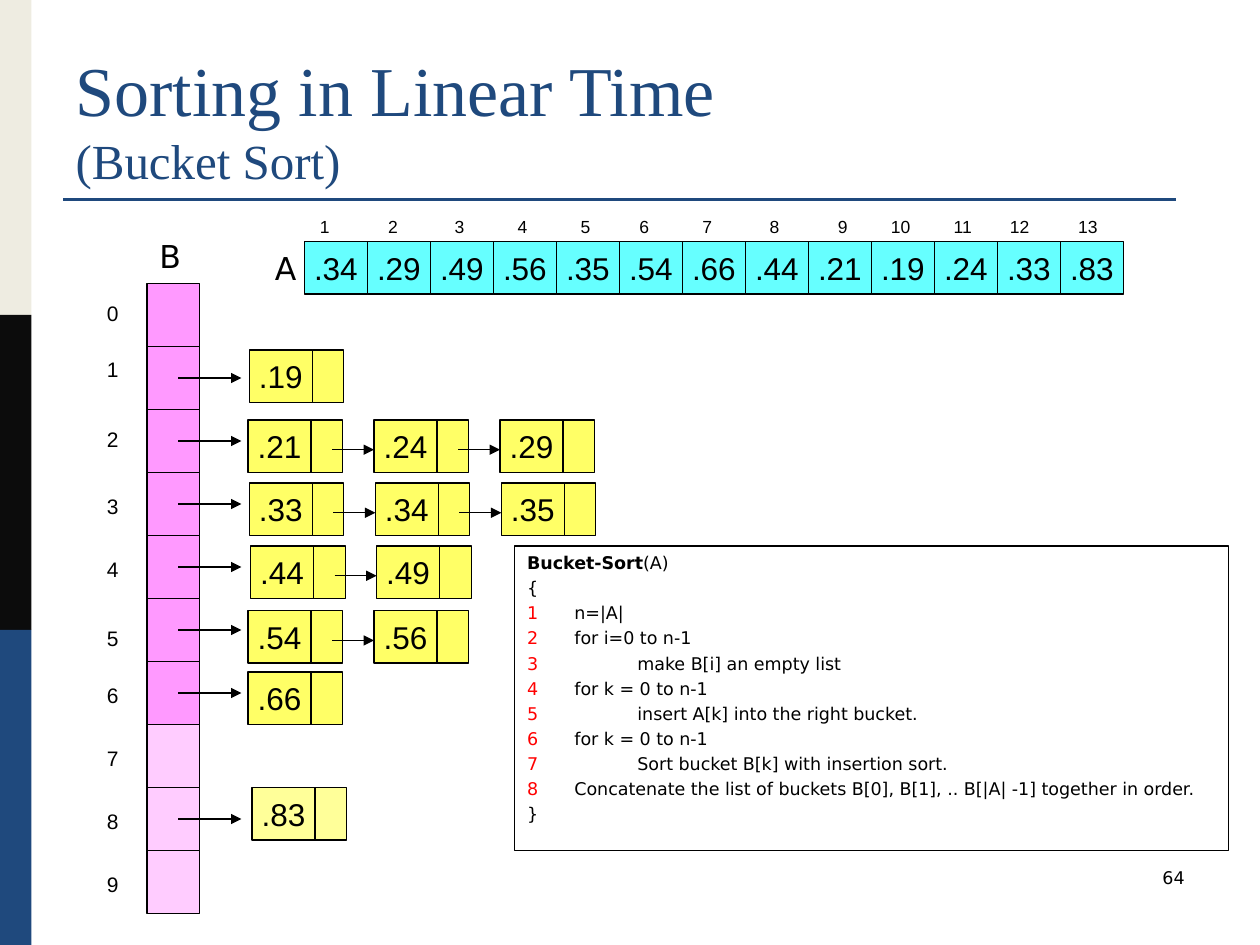
from lxml.etree import SubElement
from pptx import Presentation
from pptx.dml.color import RGBColor
from pptx.enum.shapes import MSO_CONNECTOR, MSO_SHAPE
from pptx.enum.text import MSO_ANCHOR, MSO_AUTO_SIZE, PP_ALIGN
from pptx.oxml.ns import qn
from pptx.util import Pt

COLORS = {
    "navy": "1F497D", "cream": "EEECE1", "ink": "0C0C0C", "black": "000000",
    "red": "FF0000", "array": "66FFFF", "bucket": "FF99FF",
    "pale bucket": "FFCCFF", "node": "FFFF66", "pale node": "FFFF99",
}
CELL, SHORT, LINK = 36, 30, 18  # long and short side of a cell, width of a link field

deck = Presentation()
deck.slide_width, deck.slide_height = Pt(720), Pt(540)
slide = deck.slides.add_slide(deck.slide_layouts[1])
shapes = slide.shapes


def write(paragraph, text, size=18, font="Arial", color="black", bold=False, align=None):
    run = paragraph.add_run()
    run.text = text
    run.font.size, run.font.name, run.font.bold = Pt(size), font, bold
    run.font.color.rgb = RGBColor.from_string(COLORS[color])
    if align is not None:
        paragraph.alignment = align


def add_box(left, top, width, height, fill, text="", outlined=True):
    box = shapes.add_shape(MSO_SHAPE.RECTANGLE, Pt(left), Pt(top), Pt(width), Pt(height))
    box.shadow.inherit = False
    box.fill.solid()
    box.fill.fore_color.rgb = RGBColor.from_string(COLORS[fill])
    if outlined:
        box.line.color.rgb = RGBColor.from_string(COLORS["black"])
        box.line.width = Pt(0.75)
    else:
        box.line.fill.background()
    if text:
        box.text_frame.word_wrap = False
        write(box.text_frame.paragraphs[0], text, align=PP_ALIGN.CENTER)


# Side band and title
for i, color in enumerate(["cream", "ink", "navy"]):
    add_box(0, 180 * i, 18, 180, color, outlined=False)

title = shapes.title
title.left, title.top, title.width, title.height = Pt(36), Pt(21.6), Pt(648), Pt(90)
title.text_frame.vertical_anchor = MSO_ANCHOR.BOTTOM
title.text_frame.auto_size = MSO_AUTO_SIZE.NONE
heading = title.text_frame.paragraphs[0]
write(heading, "Sorting in Linear Time", 40, "Times New Roman", "navy", align=PP_ALIGN.LEFT)
heading.add_line_break()
write(heading, "(Bucket Sort)", 28, "Times New Roman", "navy")

# Array A
values = ".34 .29 .49 .56 .35 .54 .66 .44 .21 .19 .24 .33 .83".split()
for i, value in enumerate(values):
    add_box(174 + CELL * i, 138, CELL, SHORT, "array", value)

# Buckets B, each with its arrow to a chain of nodes
chains = {  # bucket: left, top, values
    1: (142.5, 200, [".19"]),
    2: (141.75, 240, [".21", ".24", ".29"]),
    3: (142.5, 276, [".33", ".34", ".35"]),
    4: (143.25, 312, [".44", ".49"]),
    5: (141.75, 349, [".54", ".56"]),
    6: (141.75, 384, [".66"]),
    8: (144, 450, [".83"]),
}
lines = [(36, 114, 672, "navy", 1.5, False)]  # left, y, right, color, width, arrow
for bucket in range(10):
    bucket_top = 162 + CELL * bucket
    add_box(84, bucket_top, SHORT, CELL, "bucket" if bucket < 7 else "pale bucket")
    if bucket not in chains:
        continue
    lines.append((102, bucket_top + 18, 138, "black", 0.75, True))
    chain_left, top, chain = chains[bucket]
    fill = "node" if bucket < 7 else "pale node"
    for i, value in enumerate(chain):
        left = chain_left + 72 * i
        add_box(left, top, CELL, SHORT, fill, value)
        add_box(left + CELL, top, LINK, SHORT, fill)
        if i:
            lines.append((left - 24, top + 17, left, "black", 0.75, True))

for left, y, right, color, width, arrow in lines:
    line = shapes.add_connector(MSO_CONNECTOR.STRAIGHT, Pt(left), Pt(y), Pt(right), Pt(y))
    line.line.color.rgb = RGBColor.from_string(COLORS[color])
    line.line.width = Pt(width)
    if arrow:
        SubElement(line.line._get_or_add_ln(), qn("a:tailEnd"), type="triangle")
    SubElement(line._element.spPr, qn("a:effectLst"))

# Labels: text, left, top, width, height, size, font, alignment
index_text = "".join(f"\t{i + 1}" for i in range(len(values)))
bucket_label_tops = [168, 200, 240, 278.5, 314.5, 354, 386.5, 422.5, 458.5, 494.5]
labels = [
    (index_text, 162, 120, 486, 19.5, 10, "Arial", PP_ALIGN.LEFT),
    ("A", 150, 139, 36, 29, 18, "DejaVu Sans", PP_ALIGN.LEFT),
    ("B", 84, 132, 36, 29, 18, "DejaVu Sans", PP_ALIGN.LEFT),
    ("64", 516, 492, 168, 36, 10, "DejaVu Sans", PP_ALIGN.RIGHT),
]
labels += [(str(i), 54, top, 24, 21.5, 12, "Arial", PP_ALIGN.LEFT)
           for i, top in enumerate(bucket_label_tops)]
index_stops = [16.5, 55.5, 93.5, 129.5, 165.5, 199, 235, 273.5, 312.5, 345.5, 381, 413.5, 452.5]
for text, left, top, width, height, size, font, align in labels:
    label = shapes.add_textbox(Pt(left), Pt(top), Pt(width), Pt(height))
    label.text_frame.word_wrap = True
    paragraph = label.text_frame.paragraphs[0]
    write(paragraph, text, size, font, align=align)
    if text == index_text:
        tab_list = SubElement(paragraph._p.get_or_add_pPr(), qn("a:tabLst"))
        for stop in index_stops:
            SubElement(tab_list, qn("a:tab"), pos=str(Pt(stop)), algn="ctr")

# Pseudocode
code = slide.placeholders[1]
code.left, code.top, code.width, code.height = Pt(294), Pt(312), Pt(408), Pt(174)
code.line.color.rgb = RGBColor.from_string(COLORS["black"])
code.line.width = Pt(0.75)
code.text_frame.auto_size = MSO_AUTO_SIZE.NONE
steps = [
    "\tn=|A|",
    "\tfor i=0 to n-1",
    "\t\tmake B[i] an empty list",
    "\tfor k = 0 to n-1",
    "\t\tinsert A[k] into the right bucket.",
    "\tfor k = 0 to n-1",
    "\t\tSort bucket B[k] with insertion sort.",
    "\tConcatenate the list of buckets B[0], B[1], .. B[|A| -1] together in order.",
]
code_lines = [[("Bucket-Sort", "black", True), ("(A)", "black", False)], [("{", "black", False)]]
code_lines += [[(str(i), "red", False), (step, "black", False)] for i, step in enumerate(steps, 1)]
code_lines.append([("}", "black", False)])
for i, parts in enumerate(code_lines):
    paragraph = code.text_frame.add_paragraph() if i else code.text_frame.paragraphs[0]
    paragraph.space_before = Pt(2.3)
    properties = paragraph._p.get_or_add_pPr()
    properties.set("marL", str(Pt(27)))
    properties.set("indent", str(Pt(-27)))
    SubElement(properties, qn("a:buNone"))
    for text, color, bold in parts:
        write(paragraph, text, 10, "DejaVu Sans", color, bold, PP_ALIGN.JUSTIFY)

deck.save("out.pptx")
